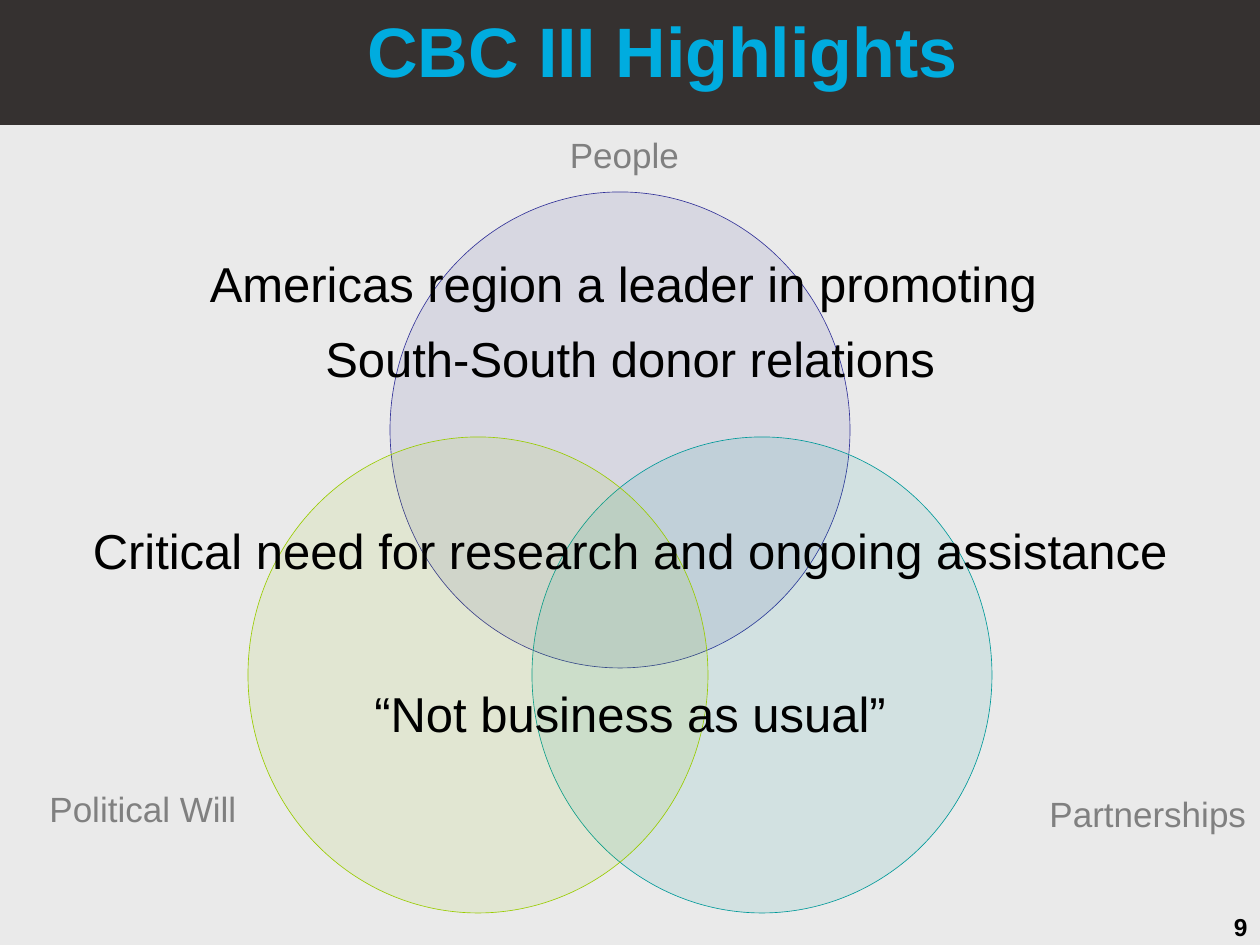
from dataclasses import dataclass

from lxml import etree
from pptx import Presentation
from pptx.dml.color import RGBColor
from pptx.enum.shapes import MSO_SHAPE
from pptx.enum.text import MSO_ANCHOR, MSO_AUTO_SIZE, PP_ALIGN
from pptx.oxml.ns import qn
from pptx.util import Emu, Pt

RECTANGLE, OVAL = MSO_SHAPE.RECTANGLE, MSO_SHAPE.OVAL
LEFT, CENTER, RIGHT = PP_ALIGN.LEFT, PP_ALIGN.CENTER, PP_ALIGN.RIGHT
MIDDLE, TOP = MSO_ANCHOR.MIDDLE, MSO_ANCHOR.TOP
NO_FIT, GROW = MSO_AUTO_SIZE.NONE, MSO_AUTO_SIZE.SHAPE_TO_FIT_TEXT
TITLE_ONLY = 5
PX_PER_INCH = 126


@dataclass(frozen=True)
class Theme:
    """Colours and type sizes of the deck."""

    font: str = "Arial"
    background: str = "EAEAEA"
    band: str = "353130"
    accent: str = "00ACDF"
    ink: str = "000000"
    muted: str = "808080"
    people: str = "333399"
    partnerships: str = "009999"
    political_will: str = "99CC00"
    title_size: int = 40
    statement_size: int = 28
    label_size: int = 20
    number_size: int = 14
    outline: float = 0.37
    circle_opacity: int = 10
    paragraph_gap: float = 9.66


def px(length):
    """Turn a length in px into EMU."""
    return Emu(round(length * 914400 / PX_PER_INCH))


def rgb(code):
    """Turn a hex code into a colour."""
    return RGBColor.from_string(code)


def assign(target, values):
    """Set every format value on the target."""
    for name, value in values.items():
        setattr(target, name, value)


class SlideBuilder:
    """Holds the theme and the current slide."""

    def __init__(self, slide, theme):
        """Start on a slide with the theme's background."""
        self.slide, self.theme = slide, theme
        slide.background.fill.solid()
        slide.background.fill.fore_color.rgb = rgb(theme.background)

    def fill_text(self, holder, lines, size, color, align, bold=False, fit=GROW, anchor=TOP):
        """Fill a text holder with formatted paragraphs."""
        frame = holder.text_frame
        frame.text = "\n".join(lines)
        assign(frame, {"word_wrap": True, "auto_size": fit, "vertical_anchor": anchor})
        for index, paragraph in enumerate(frame.paragraphs):
            paragraph.alignment = align
            if index:
                paragraph.space_before = Pt(self.theme.paragraph_gap)
            for run in paragraph.runs:
                assign(run.font, {"name": self.theme.font, "size": Pt(size), "bold": bold})
                run.font.color.rgb = rgb(color)

    def title(self, wording, left, top, width, height):
        """Place the title placeholder."""
        heading = self.slide.shapes.title
        assign(heading, {"left": px(left), "top": px(top),
                         "width": px(width), "height": px(height)})
        self.fill_text(heading, [wording], self.theme.title_size, self.theme.accent,
                       CENTER, True, NO_FIT, MIDDLE)

    def text(self, lines, box, size, color, align, **options):
        """Add a text box."""
        holder = self.slide.shapes.add_textbox(*map(px, box))
        self.fill_text(holder, lines, size, color, align, **options)

    def filled(self, preset, box, color):
        """Add a flat filled preset shape."""
        figure = self.slide.shapes.add_shape(preset, *map(px, box))
        figure.shadow.inherit = False
        figure.fill.solid()
        figure.fill.fore_color.rgb = rgb(color)
        return figure

    def band(self, width, height):
        """Add the header band behind the title."""
        header = self.filled(RECTANGLE, (0, 0, width, height), self.theme.band)
        header.line.fill.background()
        self.slide.shapes.title.element.addprevious(header.element)

    def circle(self, box, color):
        """Add a translucent circle of the Venn diagram."""
        ring = self.filled(OVAL, box, color)
        ring.line.color.rgb = rgb(color)
        ring.line.width = Pt(self.theme.outline)
        tint = ring.element.spPr.find(qn("a:solidFill")).find(qn("a:srgbClr"))
        etree.SubElement(tint, qn("a:alpha"), val=str(self.theme.circle_opacity * 1000))


def main():
    """Build and save the highlights slide."""
    theme = Theme()
    deck = Presentation()
    assign(deck, {"slide_width": px(1260), "slide_height": px(945)})
    highlights = SlideBuilder(deck.slides.add_slide(deck.slide_layouts[TITLE_ONLY]), theme)

    highlights.band(1260, 125)
    highlights.title("CBC III Highlights", 123, 0, 1079, 100)
    highlights.text(["9"], (1205, 906, 55, 35), theme.number_size, theme.ink,
                    RIGHT, bold=True, fit=NO_FIT)

    for left, top, color in (
        (390, 192, theme.people),
        (532, 437, theme.partnerships),
        (248, 437, theme.political_will),
    ):
        highlights.circle((left, top, 460, 476), color)

    for label, left, top, align in (
        ("Political Will", 37, 781, LEFT),
        ("Partnerships", 1037, 786, LEFT),
        ("People", 513, 127, CENTER),
    ):
        highlights.text([label], (left, top, 223, 54), theme.label_size, theme.muted, align)

    for lines, top, height in (
        (["Americas region a leader in promoting ", "South-South donor relations"], 247, 149),
        (["Critical need for research and ongoing assistance"], 514, 72),
        (["“Not business as usual”"], 677, 72),
    ):
        highlights.text(lines, (0, top, 1260, height), theme.statement_size, theme.ink, CENTER)

    deck.save("out.pptx")


if __name__ == "__main__":
    main()
